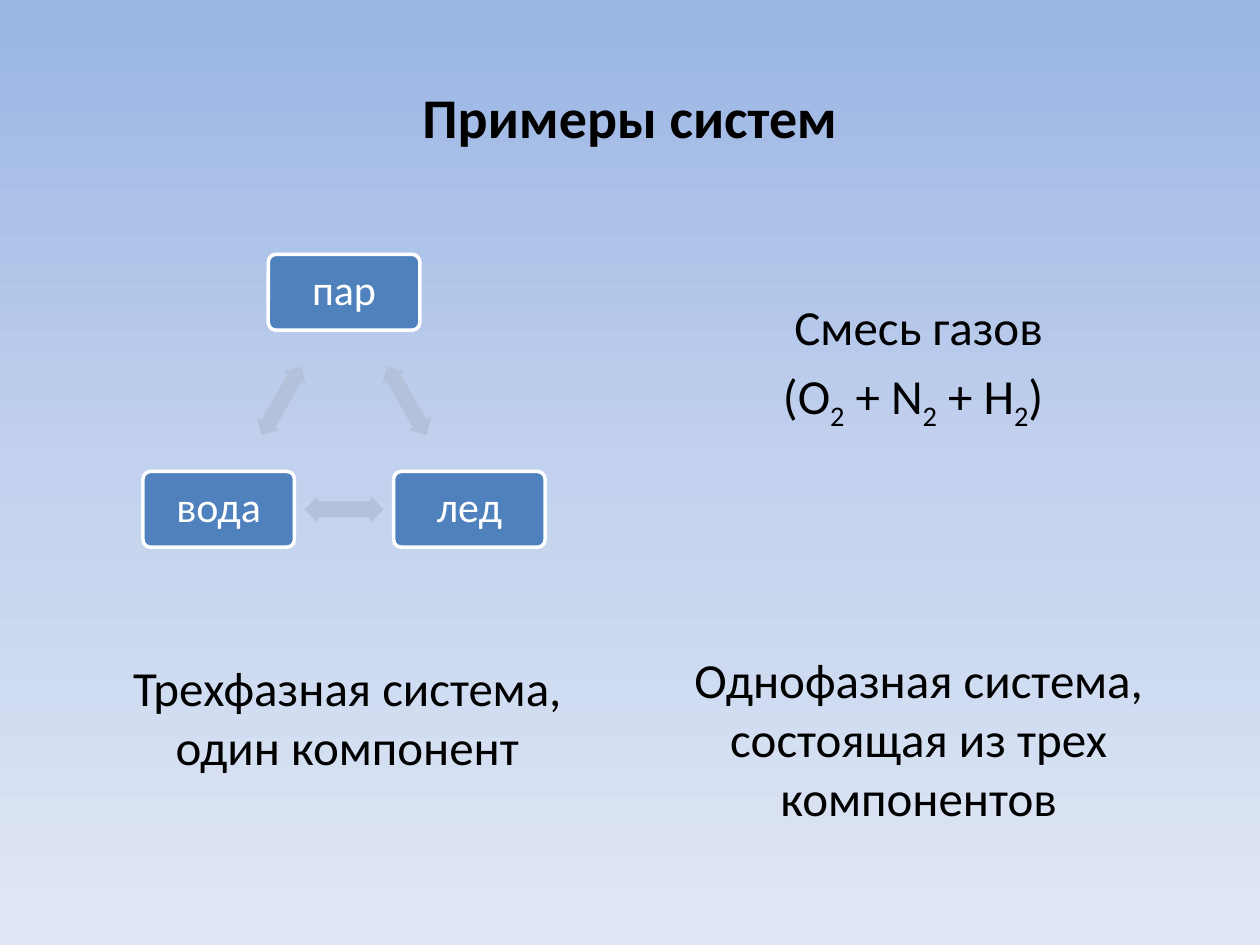
from copy import deepcopy
from math import cos, radians, sin

from pptx import Presentation
from pptx.dml.color import RGBColor
from pptx.enum.shapes import MSO_SHAPE
from pptx.enum.text import MSO_ANCHOR, PP_ALIGN
from pptx.oxml.ns import qn
from pptx.util import Pt

FONT = "Calibri"
BLACK, WHITE, NODE_BLUE, ARROW_GREY = "000000", "FFFFFF", "4F81BD", "B3C1DB"
SKY = [(0, "9AB5E4"), (0.5, "C2D1ED"), (1, "E1E8F5")]

# Cycle of phases: nodes sit evenly on a circle, arrows between neighbours
PHASES = ["пар", "лед", "вода"]
CENTER_X, CENTER_Y, RADIUS = 196.6, 249.7, 82.7
NODE_W, NODE_H = 86.6, 43.3
ARROW_W, ARROW_H = 45.2, 15.1


def color(hex_value):
    return RGBColor.from_string(hex_value)


def paint_background(slide):
    fill = slide.background.fill
    fill.gradient()
    fill.gradient_angle = 270
    first_stop = next(slide.element.iter(qn("a:gs")))
    first_stop.addnext(deepcopy(first_stop))
    for stop, (position, shade) in zip(fill.gradient_stops, SKY):
        stop.position = position
        stop.color.rgb = color(shade)


def add_run(paragraph, text, size, shade=BLACK, bold=False, subscript=False):
    run = paragraph.add_run()
    run.text = text
    formats = {"name": FONT, "size": Pt(size), "bold": bold}
    for attribute, value in formats.items():
        setattr(run.font, attribute, value)
    run.font.color.rgb = color(shade)
    if subscript:
        run.font._element.set("baseline", "-25000")


def add_title(slide, text):
    title = slide.shapes.title
    box = {"left": 36, "top": 21.6, "width": 648, "height": 90}
    for attribute, value in box.items():
        setattr(title, attribute, Pt(value))
    title.text_frame.vertical_anchor = MSO_ANCHOR.MIDDLE
    heading = title.text_frame.paragraphs[0]
    heading.alignment = PP_ALIGN.CENTER
    add_run(heading, text, 32, bold=True)


def add_caption(slide, left, top, width, height, lines):
    """Each line is a list of pieces; every second piece is a subscript."""
    frame = slide.shapes.add_textbox(
        Pt(left), Pt(top), Pt(width), Pt(height)).text_frame
    frame.word_wrap = True
    for number, pieces in enumerate(lines):
        line = frame.add_paragraph() if number else frame.paragraphs[0]
        line.alignment = PP_ALIGN.CENTER
        line.space_before = Pt(5.6 if number else 0)
        for index, piece in enumerate(pieces):
            add_run(line, piece, 28, subscript=index % 2 == 1)


def add_centered_shape(slide, kind, center, width, height, fill, adjustments):
    x, y = center
    shape = slide.shapes.add_shape(
        kind, Pt(x - width / 2), Pt(y - height / 2), Pt(width), Pt(height))
    shape.shadow.inherit = False
    shape.fill.solid()
    shape.fill.fore_color.rgb = color(fill)
    for index, value in enumerate(adjustments):
        shape.adjustments[index] = value
    return shape


def add_phase(slide, name, center):
    node = add_centered_shape(slide, MSO_SHAPE.ROUNDED_RECTANGLE, center,
                              NODE_W, NODE_H, NODE_BLUE, [0.1])
    node.line.color.rgb = color(WHITE)
    node.line.width = Pt(2)
    node.text_frame.vertical_anchor = MSO_ANCHOR.MIDDLE
    label = node.text_frame.paragraphs[0]
    label.alignment = PP_ALIGN.CENTER
    label.line_spacing = 0.9
    add_run(label, name, 24, WHITE)


def add_transition(slide, start, end, angle):
    middle = [(a + b) / 2 for a, b in zip(start, end)]
    arrow = add_centered_shape(slide, MSO_SHAPE.LEFT_RIGHT_ARROW, middle,
                               ARROW_W, ARROW_H, ARROW_GREY, [0.6, 0.5])
    arrow.rotation = angle
    arrow.line.fill.background()


def add_phase_cycle(slide):
    step = 360 / len(PHASES)
    angles = [radians(step * i - 90) for i in range(len(PHASES))]
    centers = [(CENTER_X + RADIUS * cos(a), CENTER_Y + RADIUS * sin(a))
               for a in angles]
    for i, name in enumerate(PHASES):
        add_phase(slide, name, centers[i])
        add_transition(slide, centers[i], centers[(i + 1) % len(PHASES)],
                       60 + step * i)


def main():
    deck = Presentation()
    deck.slide_width, deck.slide_height = Pt(720), Pt(540)
    slide = deck.slides.add_slide(deck.slide_layouts[5])
    paint_background(slide)
    add_title(slide, "Примеры систем")

    # Left: three phases, one component
    add_phase_cycle(slide)
    add_caption(slide, 63.4, 372.2, 270, 75,
                [["Трехфазная система, один компонент"]])

    # Right: one phase, three components
    add_caption(slide, 365.8, 166, 318.2, 82,
                [["Смесь газов"],
                 ["(O", "2", " + N", "2", " + H", "2", ") "]])
    add_caption(slide, 365.8, 367.5, 318.2, 110,
                [["Однофазная система, состоящая из трех компонентов"]])

    deck.save("out.pptx")


if __name__ == "__main__":
    main()
